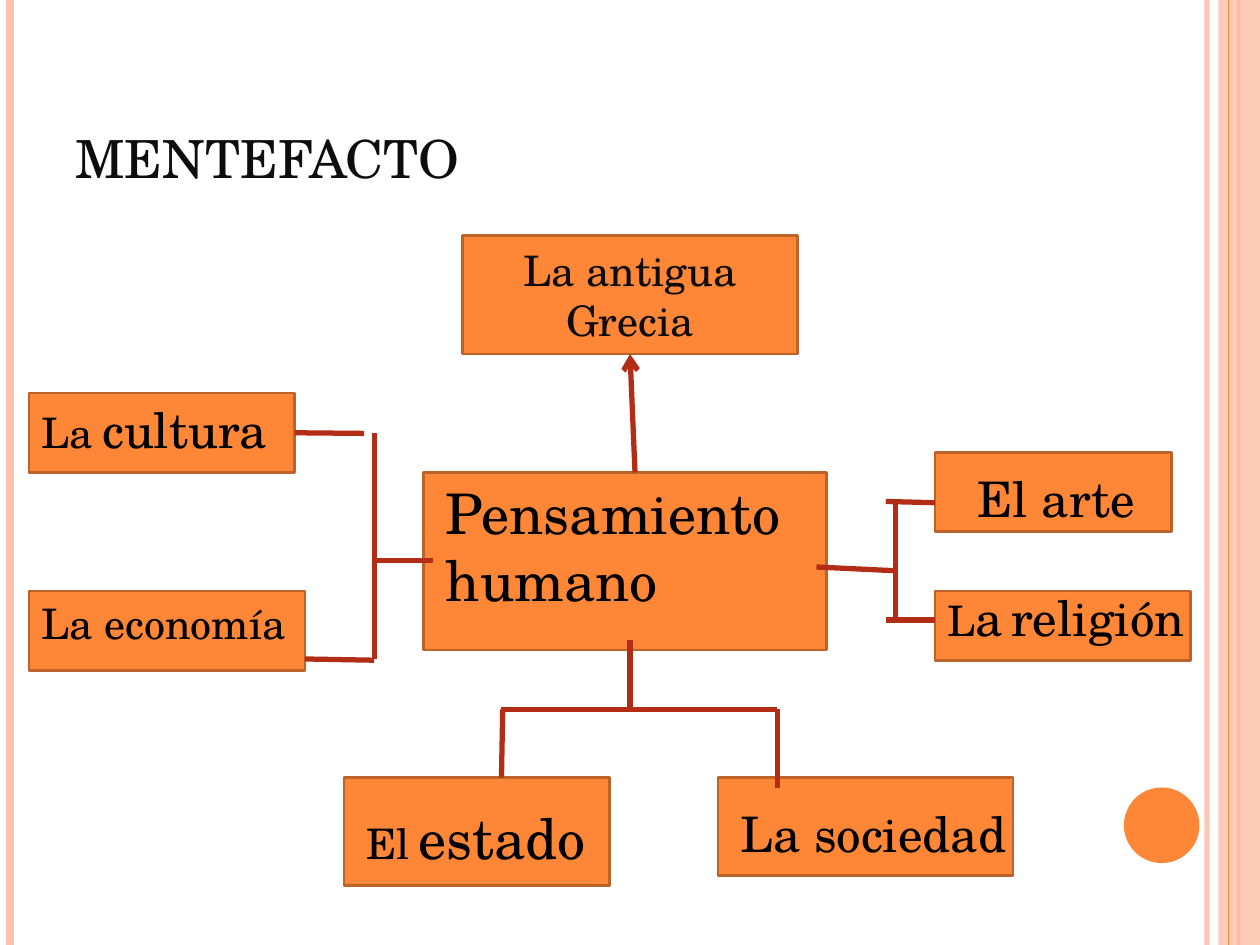
from lxml import etree
from pptx import Presentation
from pptx.dml.color import RGBColor
from pptx.enum.shapes import MSO_CONNECTOR, MSO_SHAPE
from pptx.enum.text import MSO_ANCHOR, PP_ALIGN
from pptx.oxml.ns import qn
from pptx.util import Inches, Pt

RECT, OVAL, STRAIGHT = MSO_SHAPE.RECTANGLE, MSO_SHAPE.OVAL, MSO_CONNECTOR.STRAIGHT
TOP, MIDDLE, BOTTOM = MSO_ANCHOR.TOP, MSO_ANCHOR.MIDDLE, MSO_ANCHOR.BOTTOM
LEFT, CENTER = PP_ALIGN.LEFT, PP_ALIGN.CENTER
ORANGE = RGBColor(0xFE, 0x86, 0x37)
BROWN = RGBColor(0xBC, 0x63, 0x29)
PEACH = RGBColor(0xFE, 0xC3, 0xAE)
RED = RGBColor(0xB3, 0x2C, 0x16)
BLACK = RGBColor(0, 0, 0)
INK = RGBColor(0x0D, 0x0D, 0x0D)
FONT = "TeX Gyre Schola"
W, H = 10, 7.5

STRIPES = [(9.58, PEACH, 3, 93), (0.08, PEACH, 4.5, 100), (9.83, ORANGE, 1.5, 100)]
INNER_STRIPE = (9.75, ORANGE, 0.75, 100)
BAND = (9.67, 0, 0.33, H)
DOT = (8.92, 6.25, 0.6, 0.6)

TITLE = ((0.5, 0.3, 8.17, 1.25), [("MENTEFACTO", 30)])
BOXES = {
    "pensamiento": (3.36, 3.75, 3.2, 1.41),
    "grecia": (3.67, 1.87, 2.66, 0.94),
    "arte": (7.42, 3.59, 1.88, 0.63),
    "religion": (7.42, 4.69, 2.03, 0.55),
    "cultura": (0.23, 3.12, 2.11, 0.63),
    "economia": (0.23, 4.69, 2.19, 0.63),
    "estado": (2.73, 6.17, 2.11, 0.86),
    "sociedad": (5.7, 6.17, 2.34, 0.78),
}
GRECIA_TEXT = [("La antigua Grecia", 24)]
LABELS = [
    ((3.44, 3.75, 3.2, 1.18), [("Pensamiento humano", 32)]),
    ((0.23, 3.12, 2.03, 0.57), [("La", 24), (" ", 20), ("cultura", 28)]),
    ((0.23, 4.69, 2.19, 0.5), [("La economía", 24)]),
    ((7.66, 3.67, 1.72, 0.57), [("El arte", 28)]),
    ((7.42, 4.61, 2.58, 0.57), [("L", 24), ("a", 28), (" ", 18), ("religión", 28)]),
    ((2.81, 6.33, 2.03, 0.64), [("El", 24), (" ", 18), ("estado", 32)]),
    ((5.78, 6.33, 2.5, 0.57), [("La sociedad", 28)]),
]
ARROW = (5.04, 3.75, 5, 2.81)
CULTURA_BRANCH = (2.34, 3.44, 2.89, 3.44)
BRANCHES = [
    (6.48, 4.5, 7.11, 4.53), (7.11, 3.98, 7.11, 4.92),
    (7.03, 3.98, 7.42, 3.99), (7.03, 4.92, 7.42, 4.92),
    (5, 5.08, 5, 5.63), (3.99, 5.63, 3.98, 6.17),
    (6.17, 5.63, 3.98, 5.63), (6.17, 5.63, 6.17, 6.25),
    (2.97, 4.45, 3.44, 4.45), (2.97, 3.44, 2.97, 5.23),
    (2.42, 5.23, 2.97, 5.24),
]


def inches(values):
    return [Inches(v) for v in values]


def set_alpha(props, percent):
    color = next(props.iter(qn("a:srgbClr")))
    etree.SubElement(color, qn("a:alpha")).set("val", str(percent * 1000))


def add_box(s, kind, at, fill, line=None):
    box = s.shapes.add_shape(kind, *inches(at))
    box.shadow.inherit = False
    box.fill.solid()
    box.fill.fore_color.rgb = fill
    if line is None:
        box.line.fill.background()
    else:
        box.line.color.rgb = line
        box.line.width = Pt(1.5)
    return box


def write(shape, runs, color=BLACK, anchor=TOP, align=LEFT):
    tf = shape.text_frame
    tf.word_wrap = True
    tf.vertical_anchor = anchor
    p = tf.paragraphs[0]
    p.alignment = align
    for text, size in runs:
        r = p.add_run()
        r.text = text
        for key, value in {"name": FONT, "size": Pt(size)}.items():
            setattr(r.font, key, value)
        r.font.color.rgb = color


def add_line(s, ends, color=RED, width=3):
    line = s.shapes.add_connector(STRAIGHT, *inches(ends))
    line.line.color.rgb = color
    line.line.width = Pt(width)
    etree.SubElement(line._element.spPr, qn("a:effectLst"))
    return line


def add_stripe(s, x, color, width, opacity):
    stripe = add_line(s, (x, 0, x, H), color, width)
    if opacity < 100:
        set_alpha(stripe._element.spPr, opacity)


def main():
    prs = Presentation()
    prs.slide_width, prs.slide_height = Inches(W), Inches(H)
    s = prs.slides.add_slide(prs.slide_layouts[6])

    for stripe in STRIPES:
        add_stripe(s, *stripe)
    band = add_box(s, RECT, BAND, PEACH)
    set_alpha(band._element.spPr, 87)
    add_stripe(s, *INNER_STRIPE)
    add_box(s, OVAL, DOT, ORANGE)

    at, runs = TITLE
    write(s.shapes.add_textbox(*inches(at)), runs, INK, BOTTOM)

    boxes = {name: add_box(s, RECT, at, ORANGE, BROWN) for name, at in BOXES.items()}
    write(boxes["grecia"], GRECIA_TEXT, INK, MIDDLE, CENTER)
    for at, runs in LABELS:
        write(s.shapes.add_textbox(*inches(at)), runs)

    arrow = add_line(s, ARROW)
    arrow.end_connect(boxes["grecia"], 2)
    etree.SubElement(arrow.line._get_or_add_ln(), qn("a:tailEnd")).set("type", "arrow")
    add_line(s, CULTURA_BRANCH).begin_connect(boxes["cultura"], 3)
    for ends in BRANCHES:
        add_line(s, ends)

    prs.save("out.pptx")


if __name__ == "__main__":
    main()
